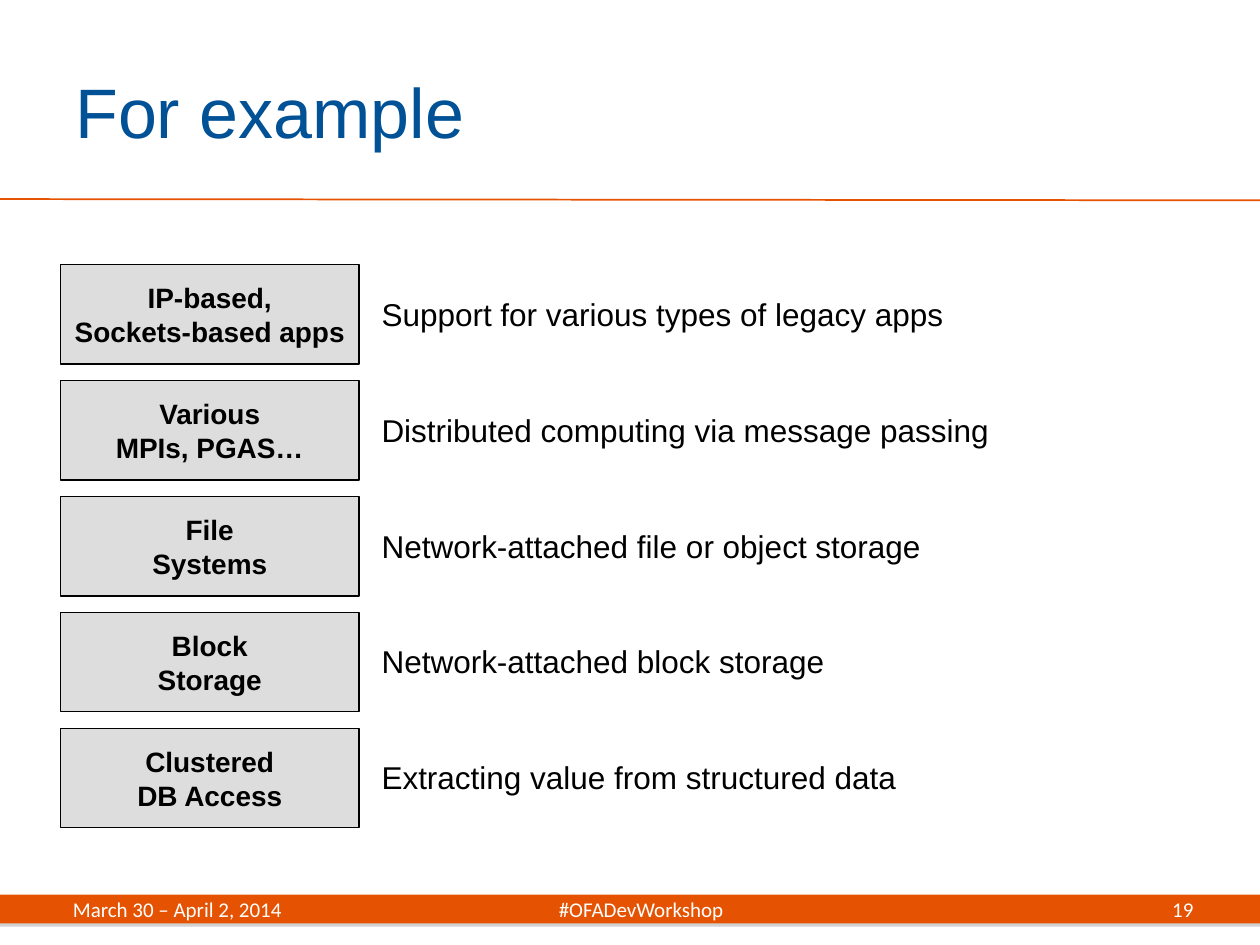
"""Build the slide of example application classes and what each one is for."""
import pptx
import pptx.dml.color
import pptx.enum.shapes
import pptx.enum.text
import pptx.oxml
import pptx.oxml.ns
import pptx.util
from pptx.util import Inches

ORANGE = pptx.dml.color.RGBColor(0xE5, 0x53, 0x02)
BLUE = pptx.dml.color.RGBColor(0x00, 0x51, 0x95)
GREY = pptx.dml.color.RGBColor(0xDD, 0xDD, 0xDD)
BLACK = pptx.dml.color.RGBColor(0, 0, 0)
WHITE = pptx.dml.color.RGBColor(0xFF, 0xFF, 0xFF)

LEFT = pptx.enum.text.PP_ALIGN.LEFT
CENTER = pptx.enum.text.PP_ALIGN.CENTER
RIGHT = pptx.enum.text.PP_ALIGN.RIGHT
MIDDLE = pptx.enum.text.MSO_ANCHOR.MIDDLE
TOP = pptx.enum.text.MSO_ANCHOR.TOP

FIRST_TOP = 2.1
ROW_STEP = 0.92
APPLICATIONS = [
    ("IP-based,\nSockets-based apps", "Support for various types of legacy apps", 4.66),
    ("Various\nMPIs, PGAS…", "Distributed computing via message passing", 5.07),
    ("File\nSystems", "Network-attached file or object storage", 4.52),
    ("Block\nStorage", "Network-attached block storage", 3.82),
    ("Clustered\nDB Access", "Extracting value from structured data", 4.4),
]
FOOTER_TOP = 7.1
FOOTER_HEIGHT = 0.23

NAMESPACE = pptx.oxml.ns.nsdecls("a")
BAR_SHADOW = (
    f'<a:effectLst {NAMESPACE}><a:outerShdw dist="22860" dir="5400000">'
    '<a:srgbClr val="808080"><a:alpha val="35000"/></a:srgbClr>'
    "</a:outerShdw></a:effectLst>"
)
NO_EFFECTS = f"<a:effectLst {NAMESPACE}/>"


def write_text(shape, text, size, color, font="Arial", bold=False,
               align=LEFT, anchor=MIDDLE, wrap=True):
    """Fill a shape with text in a single style."""
    frame = shape.text_frame
    frame.text = text
    frame.word_wrap = wrap
    frame.vertical_anchor = anchor
    for para in frame.paragraphs:
        para.alignment = align
        for span in para.runs:
            span.font.name = font
            span.font.size = pptx.util.Pt(size)
            span.font.bold = bold
            span.font.color.rgb = color


def add_text(page, left, top, width, height, text, size, color, **style):
    """Add a text box and return it."""
    box = page.shapes.add_textbox(
        Inches(left), Inches(top), Inches(width), Inches(height))
    write_text(box, text, size, color, **style)
    return box


def add_rectangle(page, left, top, width, height, fill):
    """Add a filled rectangle without line or shadow and return it."""
    box = page.shapes.add_shape(
        pptx.enum.shapes.MSO_SHAPE.RECTANGLE,
        Inches(left), Inches(top), Inches(width), Inches(height))
    box.shadow.inherit = False
    box.fill.solid()
    box.fill.fore_color.rgb = fill
    box.line.fill.background()
    return box


def add_title(page):
    """Add the title and the rule below it."""
    rule = page.shapes.add_connector(
        pptx.enum.shapes.MSO_CONNECTOR.STRAIGHT,
        Inches(0), Inches(1.58), Inches(10), Inches(1.59))
    rule.line.color.rgb = ORANGE
    rule.line.width = pptx.util.Pt(1)
    rule._element.spPr.append(pptx.oxml.parse_xml(NO_EFFECTS))
    add_text(page, 0.5, 0.25, 8.17, 1.25, "For example", 40, BLUE)


def add_application(page, top, name, purpose, width):
    """Add a named application box with its purpose beside it."""
    box = add_rectangle(page, 0.48, top, 2.37, 0.79, GREY)
    box.line.color.rgb = BLACK
    box.line.width = pptx.util.Pt(0.75)
    write_text(box, name, 16, BLACK, bold=True, align=CENTER, wrap=False)
    add_text(page, 2.93, top + 0.19, width, 0.4, purpose, 18, BLACK,
             anchor=TOP, wrap=False)


def add_footer(page):
    """Add the footer bar with date, hashtag and page number."""
    bar = add_rectangle(page, 0, FOOTER_TOP, 10, FOOTER_HEIGHT, ORANGE)
    properties = bar._element.spPr
    properties.remove(properties.find(pptx.oxml.ns.qn("a:effectLst")))
    properties.append(pptx.oxml.parse_xml(BAR_SHADOW))

    box = add_text(page, 0.48, FOOTER_TOP, 9.05, FOOTER_HEIGHT,
                   "March 30 – April 2, 2014\t#OFADevWorkshop",
                   12, WHITE, font="Calibri")
    tabs = f'<a:tabLst {NAMESPACE}><a:tab pos="{Inches(4.51)}" algn="ctr"/></a:tabLst>'
    para = box.text_frame.paragraphs[0]
    para._p.get_or_add_pPr().append(pptx.oxml.parse_xml(tabs))
    add_text(page, 8.38, FOOTER_TOP, 1.19, FOOTER_HEIGHT, "19",
             12, WHITE, font="Calibri", align=RIGHT)


def main():
    """Build and save the deck."""
    deck = pptx.Presentation()
    deck.slide_width = Inches(10)
    deck.slide_height = Inches(7.5)
    page = deck.slides.add_slide(deck.slide_layouts[6])
    add_title(page)
    for row, application in enumerate(APPLICATIONS):
        add_application(page, FIRST_TOP + row * ROW_STEP, *application)
    add_footer(page)
    deck.save("out.pptx")


if __name__ == "__main__":
    main()
